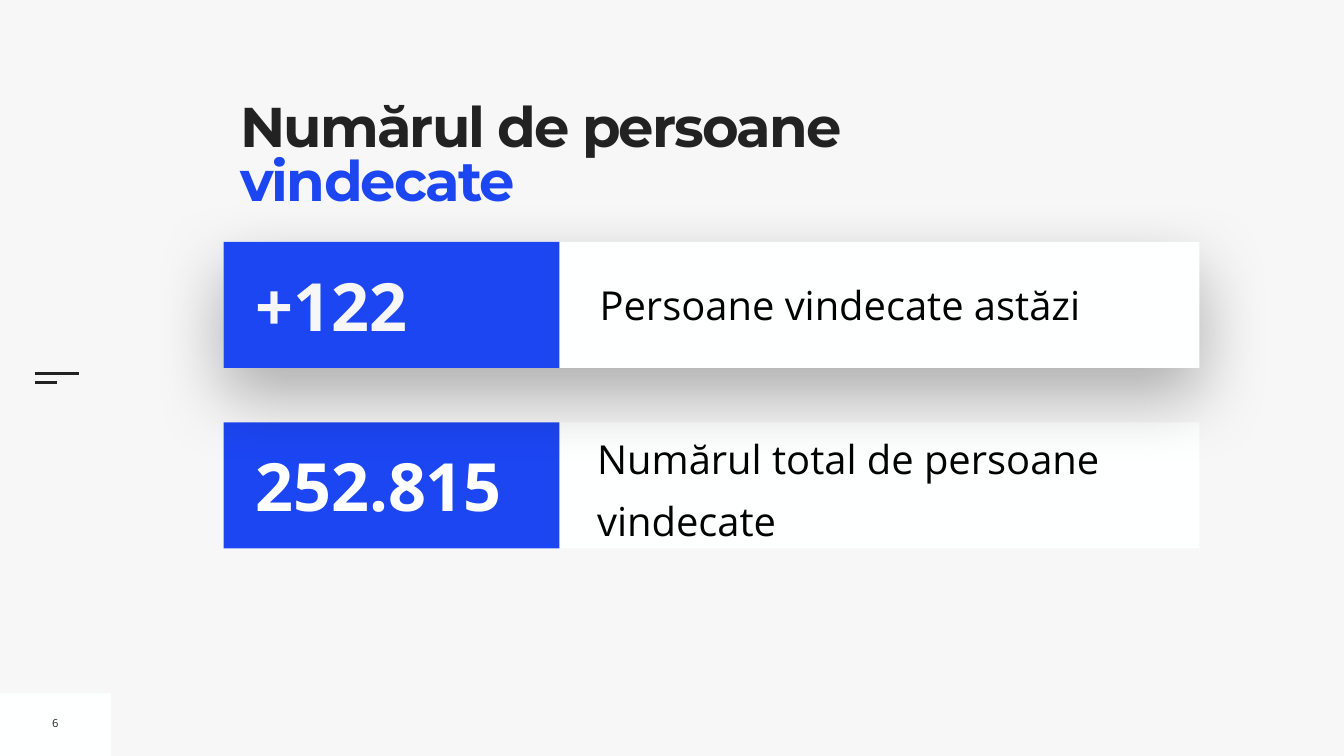
from lxml import etree
from pptx import Presentation
from pptx import util as u
from pptx.dml.color import RGBColor
from pptx.enum import shapes, text
from pptx.oxml.ns import qn

W, H = 26.67, 15
BLUE, DARK, WHITE, PAPER, BLACK = "1D46F3", "222222", "FEFFFF", "F7F7F7", "000000"

# Content: the lower row comes first so the upper row's shadow falls over it
TITLE = [("Numărul de persoane ", DARK), ("vindecate", BLUE)]
ROWS = [
    dict(top=8.38, value="252.815", color="FFFFFF", label="Numărul total de persoane vindecate",
         box=(11.85, 8.39, 11.95, 2.36), inset=0, spacing=1.3, before=20, shadow=False),
    dict(top=4.8, value="+122", color=PAPER, label="Persoane vindecate astăzi",
         box=(11.8, 5.47, 11.76, 1.16), inset=0.1, spacing=None, before=0, shadow=True),
]
PAGE = "6"
LEFT, ROW_W, ROW_H, VALUE_W = 4.44, 19.36, 2.5, 6.66
DASHES = [(7.41, 0.88), (7.59, 0.44)]

prs = Presentation()
prs.slide_width, prs.slide_height = u.Inches(W), u.Inches(H)
slide = prs.slides.add_slide(prs.slide_layouts[6])


def rgb(color):
    return RGBColor.from_string(color)


def add_rect(x, y, w, h, color):
    sp = slide.shapes.add_shape(shapes.MSO_SHAPE.RECTANGLE, *map(u.Inches, (x, y, w, h)))
    sp.shadow.inherit = False
    sp.fill.solid()
    sp.fill.fore_color.rgb = rgb(color)
    sp.line.fill.background()
    return sp


def add_shadow(sp):
    effects = sp._element.spPr.find(qn("a:effectLst"))
    outer = etree.SubElement(effects, qn("a:outerShdw"), blurRad=str(u.Pt(100)),
                             dist=str(u.Pt(40)), dir=str(90 * 60000), rotWithShape="0")
    clr = etree.SubElement(outer, qn("a:srgbClr"), val=BLACK)
    etree.SubElement(clr, qn("a:alpha"), val="30000")


def add_text(x, y, w, h, runs, size, font="Open Sans", bold=False, inset=0.1, wrap=True,
             anchor=text.MSO_ANCHOR.MIDDLE, align=text.PP_ALIGN.LEFT,
             spacing=None, before=0, tracking=None, fill=None):
    sp = slide.shapes.add_textbox(*map(u.Inches, (x, y, w, h)))
    if fill:
        sp.fill.solid()
        sp.fill.fore_color.rgb = rgb(fill)
    tf = sp.text_frame
    tf.word_wrap, tf.vertical_anchor = wrap, anchor
    tf.margin_left = tf.margin_right = tf.margin_top = tf.margin_bottom = u.Inches(inset)
    p = tf.paragraphs[0]
    p.alignment, p.line_spacing, p.space_before = align, spacing, u.Pt(before)
    for words, color in runs:
        r = p.add_run()
        r.text = words
        r.font.name, r.font.size, r.font.bold = font, u.Pt(size), bold
        r.font.color.rgb = rgb(color)
        if tracking:
            r._r.get_or_add_rPr().set("spc", str(round(tracking * 100)))


# Background, page-number tab and side dashes
slide.background.fill.solid()
slide.background.fill.fore_color.rgb = rgb(PAPER)
add_rect(0, 13.76, 2.2, 1.24, WHITE)
for y, length in DASHES:
    line = slide.shapes.add_connector(shapes.MSO_CONNECTOR.STRAIGHT,
                                      *map(u.Inches, (0.69, y, 0.69 + length, y)))
    line.line.color.rgb, line.line.width = rgb(DARK), u.Pt(3)
    etree.SubElement(line._element.spPr, qn("a:effectLst"))

# Title and page number
add_text(4.77, 2.07, 13.01, 2.73, TITLE, 80, font="Montserrat", bold=True, inset=0,
         anchor=text.MSO_ANCHOR.TOP, spacing=0.8, tracking=-2.7, fill=PAPER)
add_text(0.93, 14.09, 0.34, 0.51, [(PAGE, DARK)], 16, wrap=False, align=text.PP_ALIGN.CENTER)

# Rows: white band, label, blue value block
for row in ROWS:
    band = add_rect(LEFT, row["top"], ROW_W, ROW_H, WHITE)
    if row["shadow"]:
        add_shadow(band)
    add_text(*row["box"], [(row["label"], BLACK)], 57, inset=row["inset"],
             spacing=row["spacing"], before=row["before"])
    add_rect(LEFT, row["top"], VALUE_W, ROW_H, BLUE)
    add_text(LEFT + 0.53, row["top"] + 0.35, 6.03, 1.8, [(row["value"], row["color"])], 95, bold=True)

prs.save("out.pptx")
